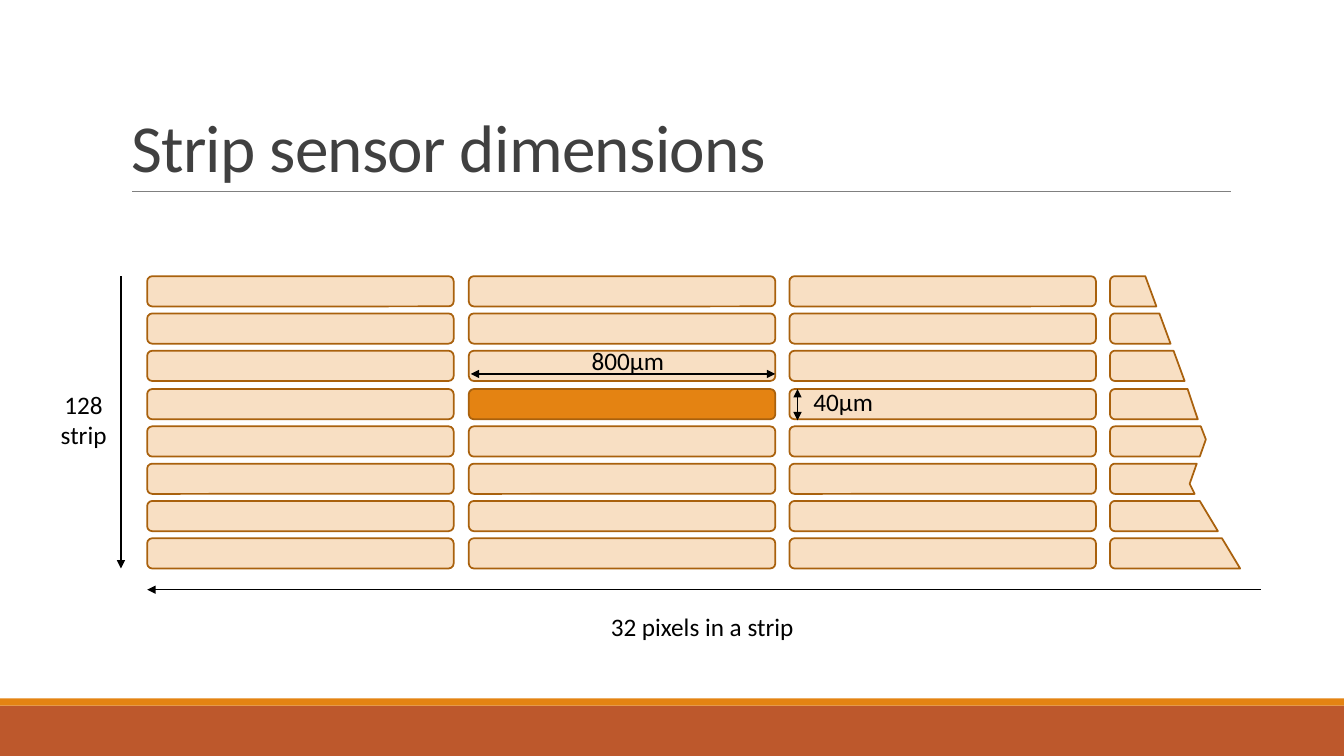
"""Build the strip sensor dimensions slide."""
import math
from dataclasses import dataclass

from lxml import etree
from pptx import Presentation
from pptx import util as u
from pptx.dml.color import RGBColor
from pptx.enum import shapes, text
from pptx.oxml.ns import qn

PX = 9144
FONT = "Calibri"
COLOURS = {
    "band": "BD582C", "pixel": "E48312", "outline": "A9610D",
    "rule": "808080", "title": "404040", "ink": "000000",
}
ROWS, COLUMNS = 8, 3
GRID_LEFT, GRID_TOP = 146, 274
COLUMN_PITCH, ROW_PITCH = 318.6, 37.2
PIXEL_WIDTH, PIXEL_HEIGHT, CORNER = 304, 30, 5
CUT_LEFT = 1101
HIT_PIXEL = (3, 1)
CUT_EDGES = [
    [(1136, 0), (1147, 30)],
    [(1150, 0), (1161, 30)],
    [(1164, 0), (1175, 30)],
    [(1178, 0), (1188, 30)],
    [(1191, 0), (1196, 13), (1190, 30)],
    [(1187, 0), (1180, 20), (1185, 30)],
    [(1190, 0), (1208, 30)],
    [(1212, 0), (1230, 30)],
]


@dataclass
class Band:
    top: int
    height: int
    colour: str


@dataclass
class Arrow:
    start: tuple[int, int]
    end: tuple[int, int]
    ends: tuple[str, ...]
    colour: str = "ink"
    weight: float = 1


@dataclass
class Label:
    left: int
    top: int
    width: int
    height: int
    wording: str
    align: text.PP_ALIGN = text.PP_ALIGN.LEFT


BANDS = [Band(700, 50, "band"), Band(693, 7, "pixel")]
TITLE_RULE = Arrow((131, 190), (1221, 190), (), "rule", 0.5)
ARROWS = [
    Arrow((467, 371), (769, 371), ("headEnd", "tailEnd")),
    Arrow((791, 386), (791, 417), ("headEnd", "tailEnd")),
    Arrow((146, 585), (1251, 585), ("headEnd",)),
    Arrow((120, 274), (120, 564), ("tailEnd",)),
]
LABELS = [
    Label(577, 338, 93, 40, "800µm"),
    Label(797, 378, 80, 40, "40µm"),
    Label(596, 602, 204, 40, "32 pixels in a strip"),
    Label(50, 381, 66, 71, "128\nstrip", text.PP_ALIGN.CENTER),
]


def rgb(name: str) -> RGBColor:
    return RGBColor.from_string(COLOURS[name])


def row_top(row: int) -> int:
    return round(GRID_TOP + row * ROW_PITCH)


def format_runs(frame, size: int, colour: str) -> None:
    for paragraph in frame.paragraphs:
        for run in paragraph.runs:
            run.font.name = FONT
            run.font.size = u.Pt(size)
            run.font.color.rgb = rgb(colour)


def draw_band(slide, band: Band) -> None:
    bar = slide.shapes.add_shape(
        shapes.MSO_SHAPE.RECTANGLE, 0, band.top * PX, 1333 * PX, band.height * PX)
    bar.shadow.inherit = False
    bar.fill.solid()
    bar.fill.fore_color.rgb = rgb(band.colour)
    bar.line.fill.background()


def draw_arrow(slide, arrow: Arrow) -> None:
    line = slide.shapes.add_connector(
        shapes.MSO_CONNECTOR.STRAIGHT,
        *(value * PX for value in arrow.start + arrow.end))
    line.line.color.rgb = rgb(arrow.colour)
    line.line.width = u.Pt(arrow.weight)
    properties = line.element.spPr
    for end in arrow.ends:
        etree.SubElement(properties.find(qn("a:ln")), qn(f"a:{end}"), type="triangle")
    etree.SubElement(properties, qn("a:effectLst"))


def style_pixel(pixel, hit: bool = False) -> None:
    pixel.shadow.inherit = False
    pixel.fill.solid()
    pixel.fill.fore_color.rgb = rgb("pixel")
    if not hit:
        colour = pixel.element.spPr.find(f"{qn('a:solidFill')}/{qn('a:srgbClr')}")
        etree.SubElement(colour, qn("a:alpha"), val="25000")
    pixel.line.color.rgb = rgb("outline")
    pixel.line.width = u.Pt(1.25)


def draw_pixel(slide, row: int, column: int) -> None:
    left = round(GRID_LEFT + column * COLUMN_PITCH)
    pixel = slide.shapes.add_shape(
        shapes.MSO_SHAPE.ROUNDED_RECTANGLE, left * PX, row_top(row) * PX,
        PIXEL_WIDTH * PX, PIXEL_HEIGHT * PX)
    style_pixel(pixel, (row, column) == HIT_PIXEL)


def corner_arc(centre_y: int, start_angle: int) -> list[tuple[float, float]]:
    angles = [math.radians(start_angle + step) for step in range(0, 91, 15)]
    return [(CUT_LEFT + CORNER + CORNER * math.cos(angle),
             centre_y + CORNER * math.sin(angle)) for angle in angles]


def draw_cut_pixel(slide, row: int, edge: list[tuple[int, int]]) -> None:
    outline = [*edge, *corner_arc(PIXEL_HEIGHT - CORNER, 90), *corner_arc(CORNER, 180)]
    points = [(x * PX, (row_top(row) + y) * PX) for x, y in outline]
    builder = slide.shapes.build_freeform(*points[0])
    builder.add_line_segments(points[1:], close=True)
    style_pixel(builder.convert_to_shape())


def draw_label(slide, label: Label) -> None:
    box = slide.shapes.add_textbox(
        label.left * PX, label.top * PX, label.width * PX, label.height * PX)
    frame = box.text_frame
    frame.text = label.wording
    frame.word_wrap = False
    frame.auto_size = text.MSO_AUTO_SIZE.SHAPE_TO_FIT_TEXT
    for paragraph in frame.paragraphs:
        paragraph.alignment = label.align
    format_runs(frame, 18, "ink")


def write_title(slide) -> None:
    title = slide.shapes.title
    title.left, title.top, title.width, title.height = (
        value * PX for value in (120, 31, 1100, 159))
    frame = title.text_frame
    frame.text = "Strip sensor dimensions"
    frame.word_wrap = True
    frame.auto_size = text.MSO_AUTO_SIZE.NONE
    frame.vertical_anchor = text.MSO_ANCHOR.BOTTOM
    heading = frame.paragraphs[0]
    heading.alignment = text.PP_ALIGN.LEFT
    heading.line_spacing = 0.85
    format_runs(frame, 48, "title")
    heading.runs[0].font._element.set("spc", "-50")


def main() -> None:
    deck = Presentation()
    deck.slide_width, deck.slide_height = 1333 * PX, 750 * PX
    slide = deck.slides.add_slide(deck.slide_layouts[5])
    for band in BANDS:
        draw_band(slide, band)
    draw_arrow(slide, TITLE_RULE)
    write_title(slide)
    for row, edge in enumerate(CUT_EDGES):
        for column in range(COLUMNS):
            draw_pixel(slide, row, column)
        draw_cut_pixel(slide, row, edge)
    for arrow in ARROWS:
        draw_arrow(slide, arrow)
    for label in LABELS:
        draw_label(slide, label)
    deck.save("out.pptx")


if __name__ == "__main__":
    main()
